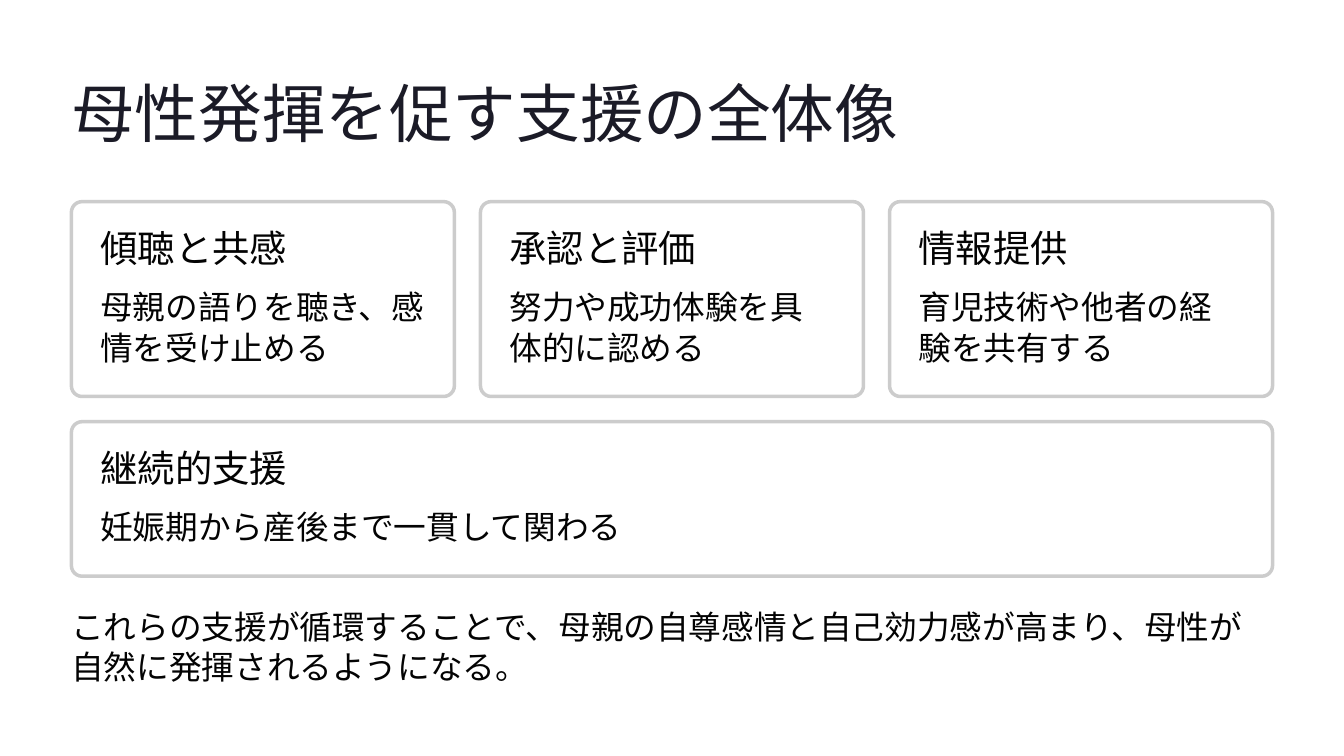
from dataclasses import dataclass

from pptx import Presentation
from pptx.dml.color import RGBColor
from pptx.enum import shapes, text
from pptx.util import Inches, Pt


@dataclass(frozen=True)
class TextStyle:
    font: str
    size: float
    leading: float
    color: RGBColor


@dataclass(frozen=True)
class Theme:
    ink = RGBColor(0x03, 0x03, 0x03)
    card_fill = RGBColor(0xFF, 0xFF, 0xFF)
    card_line = RGBColor(0xCC, 0xCC, 0xCC)
    title = TextStyle("Inter", 54.5, 68, RGBColor(0x1B, 0x1B, 0x27))
    heading = TextStyle("Inter", 32, 34, ink)
    body = TextStyle("Karla", 28, 35, ink)


THEME = Theme()
MARGIN = 0.85
CONTENT_WIDTH = 14.3
GAP = 0.31
PADDING = 0.345
CORNER = 0.128

SUPPORTS = [
    ("傾聴と共感", "母親の語りを聴き、感情を受け止める"),
    ("承認と評価", "努力や成功体験を具体的に認める"),
    ("情報提供", "育児技術や他者の経験を共有する"),
]
CONTINUITY = ("継続的支援", "妊娠期から産後まで一貫して関わる")
CLOSING = (
    "これらの支援が循環することで、母親の自尊感情と自己効力感が高まり、"
    "母性が自然に発揮されるようになる。"
)


def write(box, wording, style, wrap=True):
    frame = box.text_frame
    frame.margin_left = frame.margin_right = 0
    frame.margin_top = frame.margin_bottom = 0
    frame.word_wrap = wrap
    frame.auto_size = text.MSO_AUTO_SIZE.NONE
    frame.vertical_anchor = text.MSO_ANCHOR.TOP
    paragraph = frame.paragraphs[0]
    paragraph.text = wording
    paragraph.alignment = text.PP_ALIGN.LEFT
    paragraph.line_spacing = Pt(style.leading)
    paragraph.font.name = style.font
    paragraph.font.size = Pt(style.size)
    paragraph.font.color.rgb = style.color


def add_title(slide, wording):
    title = slide.shapes.title
    title.left, title.top = Inches(MARGIN), Inches(0.84)
    title.width, title.height = Inches(9.89), Inches(0.95)
    write(title, wording, THEME.title, wrap=False)


def add_text(slide, left, top, width, height, wording, style, wrap=True):
    box = slide.shapes.add_textbox(
        Inches(left), Inches(top), Inches(width), Inches(height))
    write(box, wording, style, wrap)


def add_card(slide, left, top, width, height, heading, detail):
    """Draw a rounded card with its heading above its detail."""
    card = slide.shapes.add_shape(
        shapes.MSO_SHAPE.ROUNDED_RECTANGLE,
        Inches(left), Inches(top), Inches(width), Inches(height))
    card.adjustments[0] = CORNER / height
    card.shadow.inherit = False
    card.fill.solid()
    card.fill.fore_color.rgb = THEME.card_fill
    card.line.color.rgb = THEME.card_line
    card.line.width = Pt(3)

    inner_left = left + PADDING
    inner_width = width - 2 * PADDING
    add_text(slide, inner_left, top + PADDING, inner_width, 0.48,
             heading, THEME.heading, wrap=False)
    add_text(slide, inner_left, top + 1, inner_width, height - 1 - PADDING,
             detail, THEME.body)


def main():
    deck = Presentation()
    deck.slide_width, deck.slide_height = Inches(16), Inches(9)
    slide = deck.slides.add_slide(deck.slide_layouts.get_by_name("Title Only"))

    add_title(slide, "母性発揮を促す支援の全体像")
    columns = len(SUPPORTS)
    card_width = (CONTENT_WIDTH - (columns - 1) * GAP) / columns
    for column, (heading, detail) in enumerate(SUPPORTS):
        left = MARGIN + column * (card_width + GAP)
        add_card(slide, left, 2.4, card_width, 2.32, heading, detail)
    add_card(slide, MARGIN, 5.02, CONTENT_WIDTH, 1.84, *CONTINUITY)
    add_text(slide, MARGIN, 7.2, CONTENT_WIDTH, 0.97, CLOSING, THEME.body)

    deck.save("out.pptx")


if __name__ == "__main__":
    main()
